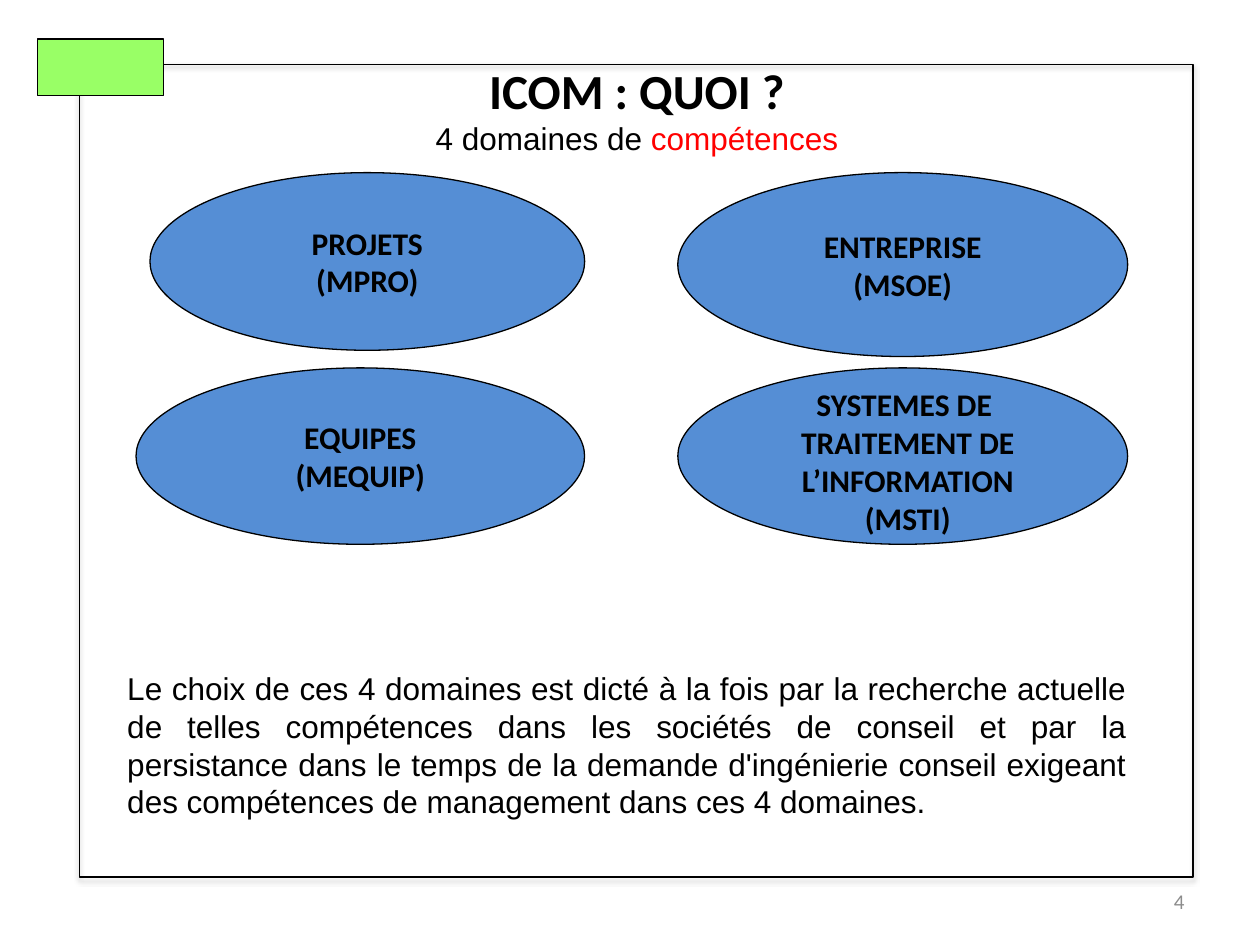
from lxml import etree
from pptx import Presentation
from pptx.dml.color import RGBColor
from pptx.enum.shapes import MSO_SHAPE as SHAPE
from pptx.enum.text import MSO_ANCHOR as ANCHOR, MSO_AUTO_SIZE as FIT, PP_ALIGN as ALIGN
from pptx.oxml import parse_xml
from pptx.oxml.ns import nsdecls, qn
from pptx.util import Pt

PX = 9144  # 100 px to the inch
COLORS = {"black": "000000", "red": "FF0000", "blue": "558ED5",
          "green": "99FF66", "gray": "8C8C8C"}


def rgb(name):
    return RGBColor.from_string(COLORS[name])


def place(sp, box):
    sp.left, sp.top, sp.width, sp.height = (v * PX for v in box)


def add_run(p, text, size, font="Calibri", color="black", bold=False):
    r = p.add_run()
    r.text = text
    r.font.size, r.font.name, r.font.bold = Pt(size), font, bold
    r.font.color.rgb = rgb(color)


def add_lines(tf, lines, align, *style):
    """Write one paragraph per line, all in the same style."""
    for i, line in enumerate(lines):
        p = tf.add_paragraph() if i else tf.paragraphs[0]
        p.alignment = align
        add_run(p, line, *style)


def add_outline(slide, kind, box, fill=None):
    sp = slide.shapes.add_shape(kind, *(v * PX for v in box))
    sp.shadow.inherit = False
    if fill:
        sp.fill.solid()
        sp.fill.fore_color.rgb = rgb(fill)
    else:
        sp.fill.background()
    sp.line.color.rgb = rgb("black")
    sp.line.width = Pt(0.75)
    return sp


def add_textbox(slide, box, lines, align, *style, anchor=ANCHOR.TOP):
    tf = slide.shapes.add_textbox(*(v * PX for v in box)).text_frame
    tf.word_wrap = True
    tf.vertical_anchor = anchor
    add_lines(tf, lines, align, *style)


def fill_title(slide, box):
    sp = slide.shapes.title
    place(sp, box)
    tf = sp.text_frame
    tf.word_wrap, tf.auto_size, tf.vertical_anchor = False, FIT.NONE, ANCHOR.TOP
    add_lines(tf, ["ICOM : QUOI ?"], ALIGN.CENTER, 28, "Calibri", "black", True)
    p = tf.add_paragraph()
    p.alignment = ALIGN.CENTER
    add_run(p, "4 domaines de ", 18, "Arial")
    add_run(p, "compétences", 18, "Arial", "red")


def add_domain(slide, box, lines, text_box=None):
    """Draw an ellipse labelled inside, or in a text box of its own."""
    style = (ALIGN.CENTER, 18, "Calibri", "black", True)
    sp = add_outline(slide, SHAPE.OVAL, box, "blue")
    if text_box:
        add_textbox(slide, text_box, lines, *style)
    else:
        tf = sp.text_frame
        tf.word_wrap, tf.vertical_anchor = False, ANCHOR.MIDDLE
        add_lines(tf, lines, *style)


def fill_body(slide, box, text):
    sp = slide.placeholders[1]
    place(sp, box)
    tf = sp.text_frame
    tf.word_wrap, tf.auto_size, tf.vertical_anchor = True, FIT.NONE, ANCHOR.TOP
    add_lines(tf, [text], ALIGN.JUSTIFY, 18, "Arial")
    p = tf.paragraphs[0]
    p.space_before = Pt(0)
    # No bullet and no hanging indent
    pPr = p._p.get_or_add_pPr()
    pPr.set("marL", "0")
    pPr.set("indent", "0")
    etree.SubElement(pPr, qn("a:buNone"))


def add_frame(slide, box):
    sp = add_outline(slide, SHAPE.RECTANGLE, box)
    effects = sp._element.spPr.find(qn("a:effectLst"))
    effects.append(parse_xml(
        f'<a:outerShdw {nsdecls("a")} blurRad="{Pt(3.1)}" dist="{Pt(1.8)}" '
        f'dir="5400000" rotWithShape="0"><a:srgbClr val="{COLORS["black"]}">'
        '<a:alpha val="35000"/></a:srgbClr></a:outerShdw>'))


def main():
    prs = Presentation()
    prs.slide_width, prs.slide_height = 1000 * PX, 750 * PX
    slide = prs.slides.add_slide(prs.slide_layouts[1])

    # Heading
    fill_title(slide, (334, 43, 343, 88))

    # Four domains
    add_domain(slide, (119, 137, 345, 141), ["PROJETS", "(MPRO)"])
    add_domain(slide, (538, 137, 357, 146), ["ENTREPRISE", "(MSOE)"])
    add_domain(slide, (108, 292, 356, 140), ["EQUIPES", "(MEQUIP)"])
    add_domain(slide, (538, 292, 357, 140),
               ["SYSTEMES DE ", "TRAITEMENT DE", "L’INFORMATION", "(MSTI)"],
               text_box=(588, 301, 265, 131))

    # Explanation
    fill_body(slide, (91, 526, 813, 131),
              "Le choix de ces 4 domaines est dicté à la fois par la recherche "
              "actuelle de telles compétences dans les sociétés de conseil et par "
              "la persistance dans le temps de la demande d'ingénierie conseil "
              "exigeant des compétences de management dans ces 4 domaines.")

    # Frame, emblem and page number
    add_frame(slide, (63, 51, 884, 645))
    add_outline(slide, SHAPE.RECTANGLE, (30, 31, 100, 45), "green")
    add_textbox(slide, (717, 695, 233, 40), ["4"], ALIGN.RIGHT,
                12, "Calibri", "gray", anchor=ANCHOR.MIDDLE)

    prs.save("out.pptx")


if __name__ == "__main__":
    main()
